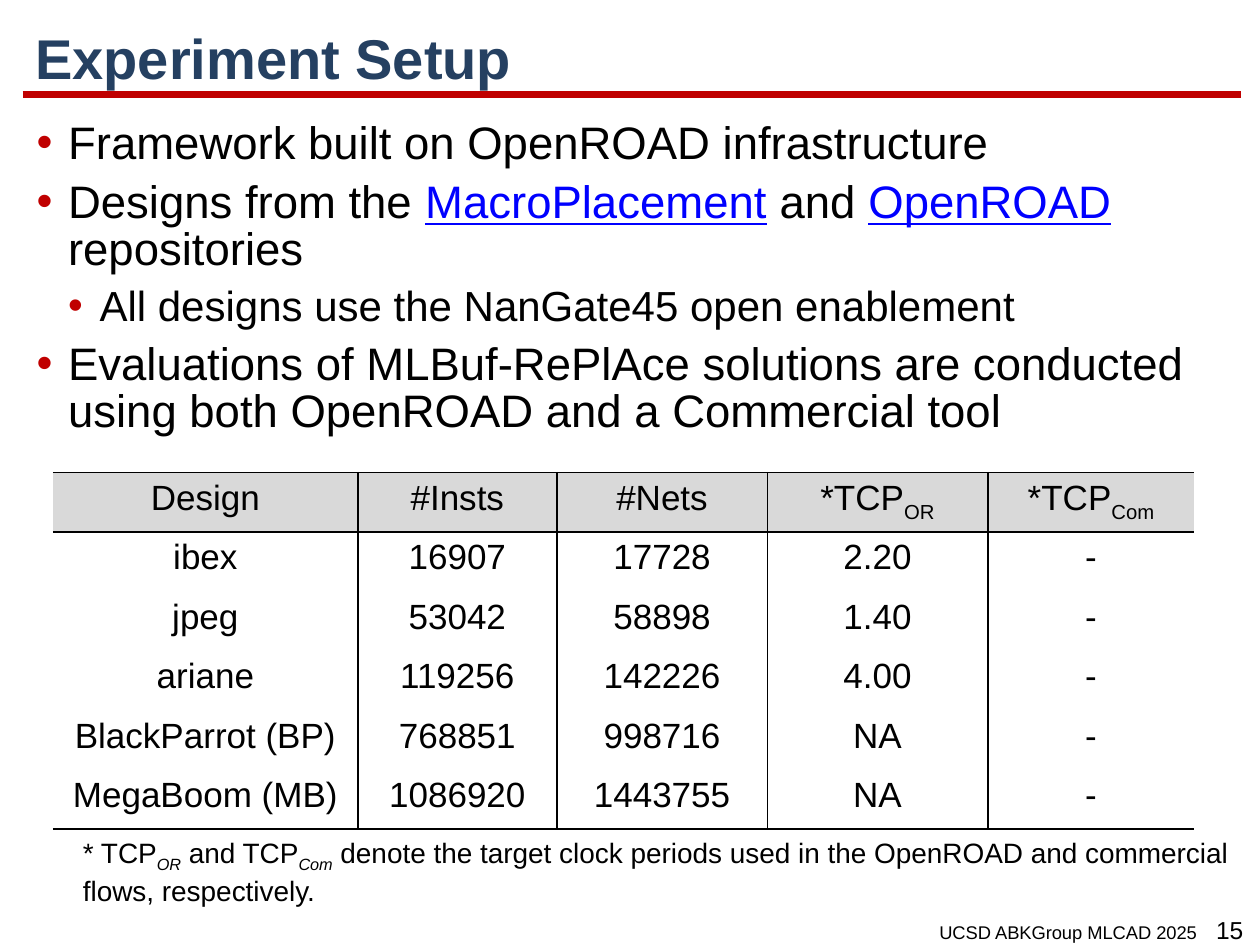
from lxml import etree
from pptx import Presentation
from pptx.dml.color import RGBColor
from pptx.enum.shapes import MSO_CONNECTOR
from pptx.enum.text import MSO_ANCHOR, PP_ALIGN
from pptx.oxml.ns import qn
from pptx.util import Inches, Pt

STRAIGHT = MSO_CONNECTOR.STRAIGHT
LEFT, CENTER, RIGHT = PP_ALIGN.LEFT, PP_ALIGN.CENTER, PP_ALIGN.RIGHT
TOP, MIDDLE = MSO_ANCHOR.TOP, MSO_ANCHOR.MIDDLE
FONT = "Arial"
BLACK, RED, NAVY, BLUE, GRAY = "000000", "C00000", "254061", "0000FF", "D9D9D9"

# Content: a run is (text, style); styles are "", "link", "sub" and "italic sub"
TITLE = "Experiment Setup"
BULLETS = [
    (0, [("Framework built on OpenROAD infrastructure", "")]),
    (0, [("Designs from the ", ""), ("MacroPlacement", "link"), (" and ", ""),
         ("OpenROAD", "link"), (" repositories", "")]),
    (1, [("All designs use the NanGate45 open enablement", "")]),
    (0, [("Evaluations of MLBuf-RePlAce solutions are conducted "
          "using both OpenROAD and a Commercial tool", "")]),
]
BULLET_SIZES = [26, 24]
HEADER = [
    [("Design", "")], [("#Insts", "")], [("#Nets", "")],
    [("*TCP", ""), ("OR", "sub")], [("*TCP", ""), ("Com", "sub")],
]
DESIGNS = [
    ("ibex", "16907", "17728", "2.20", "-"),
    ("jpeg", "53042", "58898", "1.40", "-"),
    ("ariane", "119256", "142226", "4.00", "-"),
    ("BlackParrot (BP)", "768851", "998716", "NA", "-"),
    ("MegaBoom (MB)", "1086920", "1443755", "NA", "-"),
]
COLUMN_WIDTHS = [2.42, 1.58, 1.67, 1.75, 1.64]
ROW_HEIGHT = 0.472
FOOTNOTE = [
    ("* TCP", ""), ("OR", "italic sub"), (" and TCP", ""), ("Com", "italic sub"),
    (" denote the target clock periods used in the OpenROAD and commercial "
     "flows, respectively.", ""),
]
FOOTER = "UCSD ABKGroup MLCAD 2025"
PAGE = "15"


def color(value):
    return RGBColor.from_string(value)


def write_runs(paragraph, runs, size, ink=BLACK, bold=False, align=LEFT):
    paragraph.alignment = align
    for text, style in runs:
        run = paragraph.add_run()
        run.text = text
        font = run.font
        font.name, font.size, font.bold = FONT, Pt(size), bold
        font.color.rgb = color(BLUE if style == "link" else ink)
        if style == "link":
            font.underline = True
        if "italic" in style:
            font.italic = True
        if "sub" in style:
            run._r.get_or_add_rPr().set("baseline", "-25000")


def place(shape, left, top, width, height):
    shape.left, shape.top = Inches(left), Inches(top)
    shape.width, shape.height = Inches(width), Inches(height)


def add_text(box, runs, size, align=LEFT, wrap=True):
    frame = slide.shapes.add_textbox(*map(Inches, box)).text_frame
    frame.word_wrap = wrap
    write_runs(frame.paragraphs[0], runs, size, align=align)


def add_bullet(paragraph, level):
    properties = paragraph._p.get_or_add_pPr()
    properties.set("marL", str(Inches(0.25 * (level + 1))))
    properties.set("indent", str(Inches(-0.25)))
    bullet_color = etree.SubElement(properties, qn("a:buClr"))
    etree.SubElement(bullet_color, qn("a:srgbClr"), val=RED)
    etree.SubElement(properties, qn("a:buFont"), typeface=FONT)
    etree.SubElement(properties, qn("a:buChar"), char="•")


def set_borders(cell, visible_sides):
    properties = cell._tc.get_or_add_tcPr()
    for side in "LRTB":
        line = etree.SubElement(properties, qn(f"a:ln{side}"), w=str(Pt(1)))
        if side in visible_sides:
            fill = etree.SubElement(line, qn("a:solidFill"))
            etree.SubElement(fill, qn("a:srgbClr"), val=BLACK)
        else:
            etree.SubElement(line, qn("a:noFill"))


presentation = Presentation()
presentation.slide_width, presentation.slide_height = Inches(10), Inches(7.5)
slide = presentation.slides.add_slide(presentation.slide_layouts[1])

# Title and the rule below it
title, body = slide.placeholders[0], slide.placeholders[1]
place(title, 0.18, 0.16, 9.68, 0.65)
title.text_frame.vertical_anchor = MIDDLE
heading = title.text_frame.paragraphs[0]
heading.line_spacing = 0.9
write_runs(heading, [(TITLE, "")], 32, NAVY, bold=True)

rule = slide.shapes.add_connector(
    STRAIGHT, Inches(0.18), Inches(0.75), Inches(9.85), Inches(0.75))
rule.line.color.rgb = color(RED)
rule.line.width = Pt(4.5)
etree.SubElement(rule._element.spPr, qn("a:effectLst"))

# Bullet list
place(body, 0.19, 0.92, 9.8, 2.67)
body.text_frame.vertical_anchor = TOP
for index, (level, runs) in enumerate(BULLETS):
    frame = body.text_frame
    paragraph = frame.add_paragraph() if index else frame.paragraphs[0]
    paragraph.level = level
    add_bullet(paragraph, level)
    paragraph.line_spacing = 0.85
    paragraph.space_before = Pt(7.5 if index else 0)
    write_runs(paragraph, runs, BULLET_SIZES[level])

# Table of designs
rows = [HEADER] + [[[(value, "")] for value in design] for design in DESIGNS]
last_row, last_column = len(rows) - 1, len(COLUMN_WIDTHS) - 1
table = slide.shapes.add_table(
    len(rows), len(COLUMN_WIDTHS), Inches(0.42), Inches(3.75),
    Inches(sum(COLUMN_WIDTHS)), Inches(ROW_HEIGHT * len(rows))).table
table.first_row = table.horz_banding = False
for column, width in zip(table.columns, COLUMN_WIDTHS):
    column.width = Inches(width)
for r, row in enumerate(rows):
    table.rows[r].height = Inches(ROW_HEIGHT)
    for c, runs in enumerate(row):
        cell = table.cell(r, c)
        sides = {"L": c > 0, "R": c < last_column,
                 "T": r <= 1, "B": r in (0, last_row)}
        set_borders(cell, [side for side, visible in sides.items() if visible])
        if r == 0:
            cell.fill.solid()
            cell.fill.fore_color.rgb = color(GRAY)
        else:
            cell.fill.background()
        write_runs(cell.text_frame.paragraphs[0], runs, 20, align=CENTER)

# Footnote, footer and page number
add_text((0.56, 6.58, 9.43, 0.64), FOOTNOTE, 16)
add_text((6.91, 7.26, 2.69, 0.28), [(FOOTER, "")], 10.5, RIGHT)
add_text((9.54, 7.21, 0.44, 0.34), [(PAGE, "")], 14, CENTER, wrap=False)

presentation.save("out.pptx")
